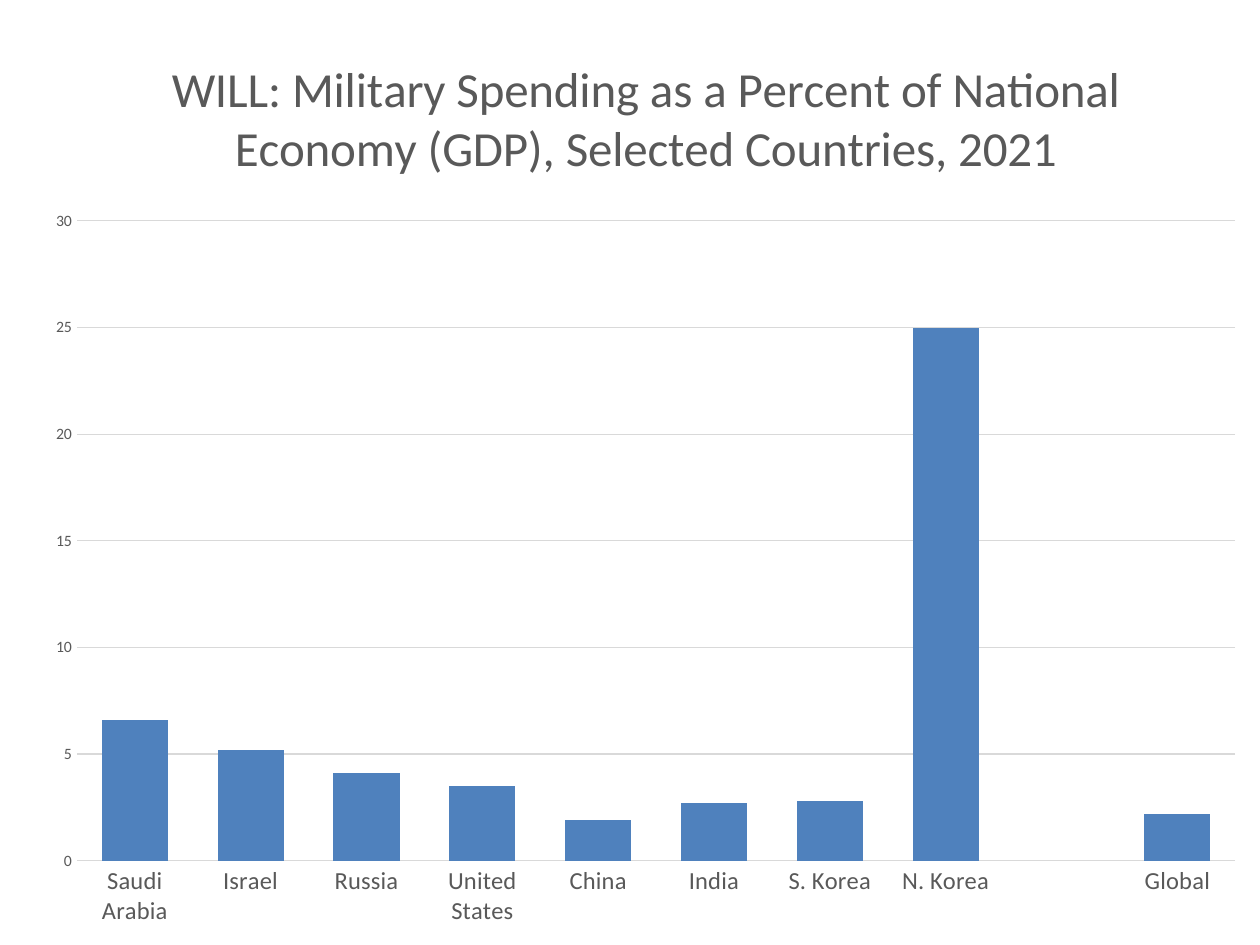
from lxml import etree
from pptx import Presentation
from pptx.chart.data import CategoryChartData
from pptx.dml.color import RGBColor
from pptx.enum.chart import XL_CHART_TYPE, XL_TICK_MARK
from pptx.oxml.ns import qn
from pptx.util import Inches, Pt

COLUMNS = XL_CHART_TYPE.COLUMN_CLUSTERED
NO_TICKS = XL_TICK_MARK.NONE

BLUE = RGBColor(0x4F, 0x81, 0xBD)
GRAY = RGBColor(0x59, 0x59, 0x59)
PALE_GRAY = RGBColor(0xD9, 0xD9, 0xD9)
BLACK = RGBColor(0, 0, 0)
FONT = "Calibri"

HEADLINE = ("WILL: Military Spending as a Percent of National "
            "Economy (GDP), Selected Countries, 2021")
SPENDING = [
    ("Saudi Arabia", 6.6),
    ("Israel", 5.2),
    ("Russia", 4.1),
    ("United States", 3.5),
    ("China", 1.9),
    ("India", 2.7),
    ("S. Korea", 2.8),
    ("N. Korea", 25),
    ("", None),  # sets the global figure apart
    ("Global", 2.2),
]
PLOT_AREA = {"x": 0.037, "y": 0.216, "w": 0.943, "h": 0.693}


def style_font(font, size, color=GRAY):
    font.name = FONT
    font.size = Pt(size)
    font.bold = False
    font.color.rgb = color


def style_line(line):
    line.color.rgb = PALE_GRAY
    line.width = Pt(0.75)


def place_plot(chart, fractions):
    """Fix the inner plot area, given as fractions of the chart."""
    plot_area = chart.plots[0]._element.getparent()
    for old in plot_area.findall(qn("c:layout")):
        plot_area.remove(old)
    layout = etree.Element(qn("c:layout"))
    plot_area.insert(0, layout)
    manual = etree.SubElement(layout, qn("c:manualLayout"))
    settings = {"layoutTarget": "inner", "xMode": "edge", "yMode": "edge", **fractions}
    for tag, value in settings.items():
        etree.SubElement(manual, qn(f"c:{tag}")).set("val", str(value))


def add_spending_chart(slide):
    data = CategoryChartData()
    data.categories = [country for country, _ in SPENDING]
    data.add_series("Series 1", [percent for _, percent in SPENDING])
    chart = slide.shapes.add_chart(
        COLUMNS, Inches(0.25), Inches(0.17), Inches(9.75), Inches(7.33), data).chart
    style_font(chart.font, 10, BLACK)
    chart.has_legend = False

    chart.has_title = True
    headline = chart.chart_title.text_frame.paragraphs[0].add_run()
    headline.text = HEADLINE
    style_font(headline.font, 28)
    chart.chart_title.include_in_layout = False

    columns = chart.plots[0]
    columns.gap_width = 75
    columns.overlap = -25
    columns.vary_by_categories = False
    fill = columns.series[0].format.fill
    fill.solid()
    fill.fore_color.rgb = BLUE

    countries, percents = chart.category_axis, chart.value_axis
    for axis, size in ((countries, 14), (percents, 9)):
        axis.major_tick_mark = axis.minor_tick_mark = NO_TICKS
        style_font(axis.tick_labels.font, size)
    style_line(countries.format.line)
    percents.format.line.fill.background()
    percents.minimum_scale, percents.maximum_scale = 0, 30
    percents.major_unit = 5
    percents.has_major_gridlines = True
    style_line(percents.major_gridlines.format.line)
    place_plot(chart, PLOT_AREA)


def main():
    deck = Presentation()
    deck.slide_width, deck.slide_height = Inches(10), Inches(7.5)
    blank_layout = deck.slide_layouts[6]
    add_spending_chart(deck.slides.add_slide(blank_layout))
    deck.save("out.pptx")


if __name__ == "__main__":
    main()
